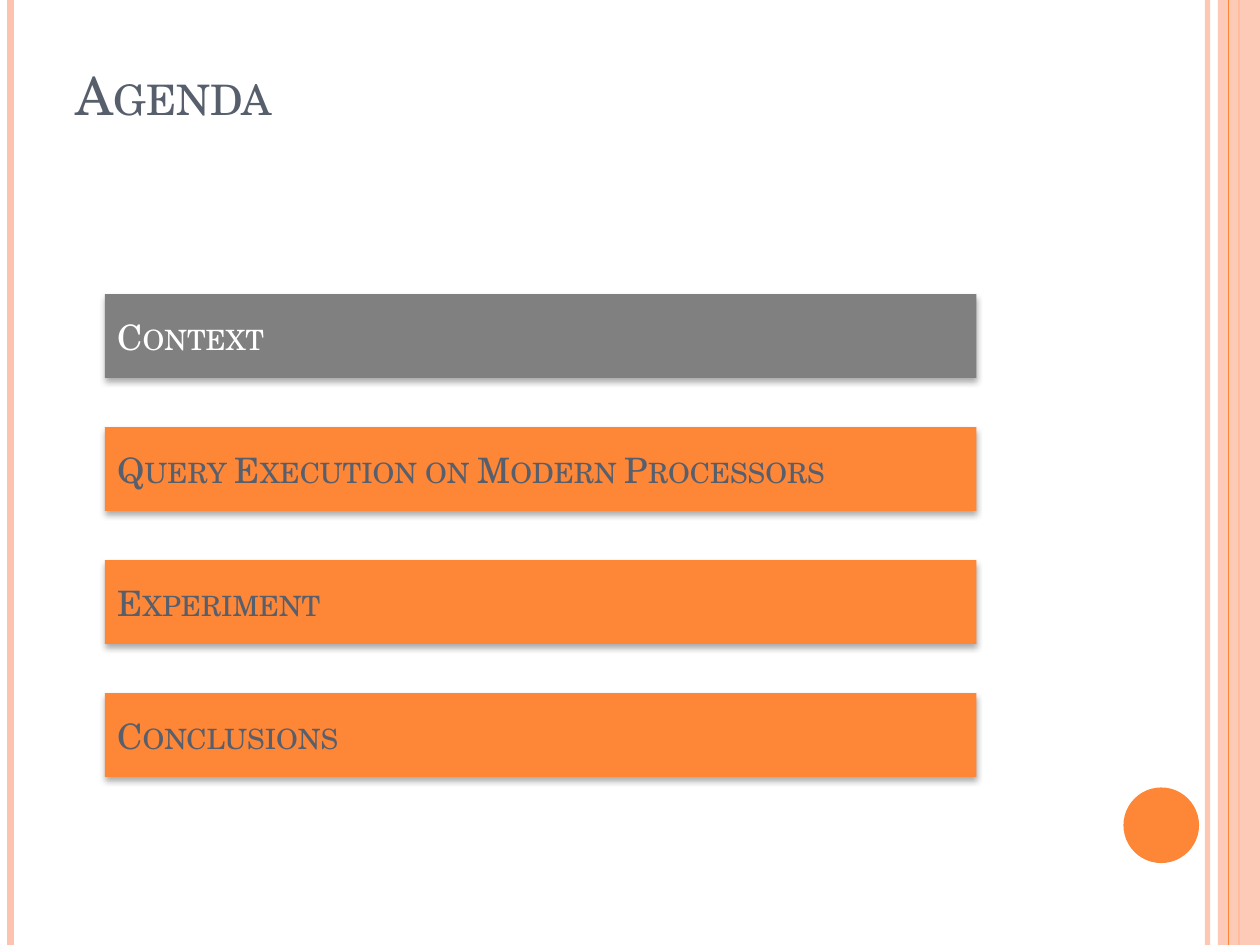
from lxml import etree
from pptx import Presentation
from pptx.dml.color import RGBColor
from pptx.enum.shapes import MSO_CONNECTOR, MSO_SHAPE
from pptx.enum.text import MSO_ANCHOR, MSO_AUTO_SIZE, PP_ALIGN
from pptx.oxml.ns import qn
from pptx.util import Pt

STRAIGHT = MSO_CONNECTOR.STRAIGHT
RECTANGLE, OVAL = MSO_SHAPE.RECTANGLE, MSO_SHAPE.OVAL
BOTTOM, MIDDLE = MSO_ANCHOR.BOTTOM, MSO_ANCHOR.MIDDLE
LEFT, NO_AUTOFIT = PP_ALIGN.LEFT, MSO_AUTO_SIZE.NONE

# Content
TITLE = "Agenda"
TOPICS = ["Context", "Query Execution on Modern Processors",
          "Experiment", "Conclusions"]
CURRENT_TOPIC = "Context"

# Style and layout, lengths in points
FONT = "TeX Gyre Schola"
ORANGE, PINK, GRAY = "FE8637", "FEC3AE", "808080"
SLATE, WHITE = "575F6D", "FFFFFF"
PAGE_WIDTH, PAGE_HEIGHT = 720, 540
BAR_LEFT, BAR_TOP, BAR_WIDTH, BAR_HEIGHT, BAR_PITCH = 60, 168, 498, 48, 76

# Border lines: x, colour, width, opacity in percent
LINES_BEHIND = [(690, PINK, 3, 93), (6, PINK, 4.5, 100), (708, ORANGE, 1.5, 100)]
LINES_IN_FRONT = [(702, ORANGE, 0.75, 100)]


def color(hex_string):
    return RGBColor.from_string(hex_string)


def set_opacity(element, percent):
    for node in element.iter(qn("a:srgbClr")):
        etree.SubElement(node, qn("a:alpha"), val=str(percent * 1000))


def add_border_line(page, x, hex_string, width, opacity):
    line = page.shapes.add_connector(STRAIGHT, Pt(x), Pt(0), Pt(x), Pt(PAGE_HEIGHT))
    line.line.color.rgb = color(hex_string)
    line.line.width = Pt(width)
    properties = line._element.spPr
    if opacity < 100:
        set_opacity(properties, opacity)
    etree.SubElement(properties, qn("a:effectLst"))


def add_filled_shape(page, kind, left, top, width, height, hex_string):
    shape = page.shapes.add_shape(kind, Pt(left), Pt(top), Pt(width), Pt(height))
    shape.shadow.inherit = False
    shape.fill.solid()
    shape.fill.fore_color.rgb = color(hex_string)
    shape.line.fill.background()
    return shape


def add_drop_shadow(shape):
    effects = shape._element.spPr.find(qn("a:effectLst"))
    shadow = etree.SubElement(
        effects, qn("a:outerShdw"), blurRad=str(Pt(3.5)), dist=str(Pt(2.2)),
        dir=str(90 * 60000), rotWithShape="0")
    etree.SubElement(shadow, qn("a:srgbClr"), val="000000")
    set_opacity(shadow, 32)


def write_text(box, text, size, hex_string, **frame_format):
    frame = box.text_frame
    frame_format = {"word_wrap": True, "auto_size": NO_AUTOFIT, **frame_format}
    for name, value in frame_format.items():
        setattr(frame, name, value)
    para = frame.paragraphs[0]
    para.alignment = LEFT
    span = para.add_run()
    span.text = text
    for name, value in {"name": FONT, "size": Pt(size)}.items():
        setattr(span.font, name, value)
    span.font.color.rgb = color(hex_string)
    span._r.get_or_add_rPr().set("cap", "small")


def main():
    deck = Presentation()
    deck.slide_width, deck.slide_height = Pt(PAGE_WIDTH), Pt(PAGE_HEIGHT)
    page = deck.slides.add_slide(deck.slide_layouts[5])

    # Border decoration
    for line in LINES_BEHIND:
        add_border_line(page, *line)
    band = add_filled_shape(page, RECTANGLE, 696, 0, 24, PAGE_HEIGHT, PINK)
    set_opacity(band._element.spPr, 87)
    for line in LINES_IN_FRONT:
        add_border_line(page, *line)
    add_filled_shape(page, OVAL, 642, 450, 43.2, 43.2, ORANGE)

    # Title, raised one line above the bottom of its box
    title = page.shapes.title
    place = {"left": 36, "top": 21.6, "width": 588, "height": 90}
    for name, value in place.items():
        setattr(title, name, Pt(value))
    write_text(title, TITLE, 30, SLATE, vertical_anchor=BOTTOM,
               margin_bottom=Pt(39.6))

    # Agenda bars, with the current topic in gray
    for index, topic in enumerate(TOPICS):
        fill, ink = (GRAY, WHITE) if topic == CURRENT_TOPIC else (ORANGE, SLATE)
        bar = add_filled_shape(page, RECTANGLE, BAR_LEFT, BAR_TOP + index * BAR_PITCH,
                               BAR_WIDTH, BAR_HEIGHT, fill)
        add_drop_shadow(bar)
        write_text(bar, topic, 20, ink, vertical_anchor=MIDDLE)

    deck.save("out.pptx")


if __name__ == "__main__":
    main()
